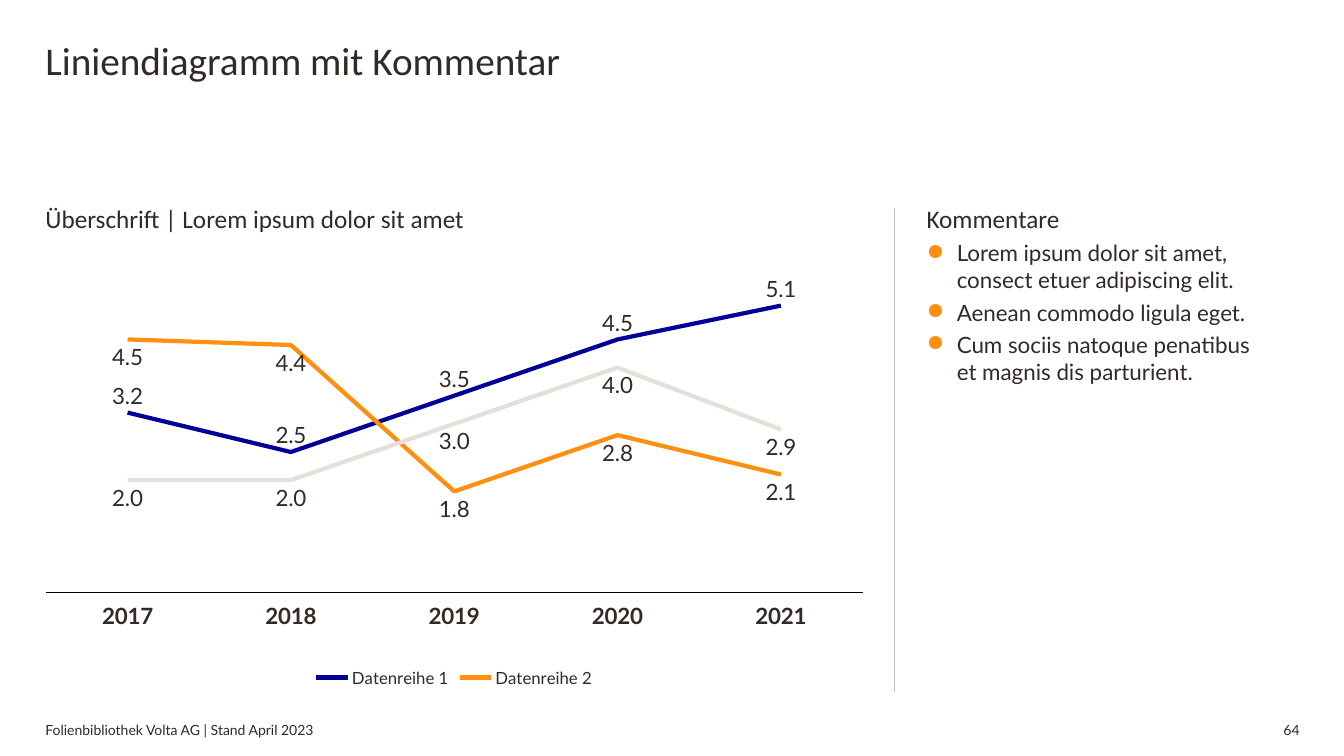
from copy import deepcopy

from lxml.etree import SubElement
from pptx import Presentation
from pptx.chart.data import CategoryChartData
from pptx.dml.color import RGBColor
from pptx.enum.chart import XL_CHART_TYPE, XL_LABEL_POSITION, XL_LEGEND_POSITION, XL_TICK_LABEL_POSITION, XL_TICK_MARK
from pptx.enum.shapes import MSO_CONNECTOR
from pptx.enum.text import MSO_ANCHOR, MSO_AUTO_SIZE, PP_ALIGN
from pptx.oxml import parse_xml
from pptx.oxml.ns import nsdecls, qn
from pptx.util import Inches, Pt

HUES = {
    "ink": "322A26", "rule": "BFBFBF", "axis": "000000", "dot": "FE8F11",
    "blue": "000099", "gold": "FF8F0F", "sand": "E5DFDA",
}
YEARS = ["2017", "2018", "2019", "2020", "2021"]
SERIES = [
    ("Datenreihe 1", [3.2, 2.5, 3.5, 4.5, 5.1], "blue", XL_LABEL_POSITION.ABOVE),
    ("Datenreihe 2", [4.5, 4.4, 1.8, 2.8, 2.1], "gold", XL_LABEL_POSITION.BELOW),
    ("Datenreihe 3", [2.0, 2.0, 3.0, 4.0, 2.9], "sand", XL_LABEL_POSITION.BELOW),
]
NOTES = [
    "Lorem ipsum dolor sit amet, consect etuer adipiscing elit.",
    "Aenean commodo ligula eget.",
    "Cum sociis natoque penatibus\vet magnis dis parturient.",
]
LEFT, SIDE, HEAD = 3.38, 68.94, 26.93
MAIN, FOOT, BASE = 60.84, 95.47, 91.47


def tint(name):
    return RGBColor.from_string(HUES[name])


def style(font, size, face="Lato", hue="ink", bold=False):
    font.size, font.name, font.bold = Pt(size), face, bold
    font.color.rgb = tint(hue)


def write(para, text, size, face="Lato", align=PP_ALIGN.LEFT, after=0, dot=False):
    para.text = text
    para.alignment = align
    para.space_before, para.space_after = Pt(0), Pt(after)
    if dot:
        props = para._p.get_or_add_pPr()
        props.set("marL", str(Inches(0.3)))
        props.set("indent", str(-Inches(0.3)))
        hue = SubElement(SubElement(props, qn("a:buClr")), qn("a:srgbClr"))
        hue.set("val", HUES["dot"])
        SubElement(props, qn("a:buChar")).set("char", "●")
    for run in para.runs:
        style(run.font, size, face)
    for gap in para._p.findall(qn("a:br")):
        gap.append(deepcopy(para.runs[0]._r.rPr))


class Deck:
    def __init__(self):
        self.file = Presentation()
        self.file.slide_width, self.file.slide_height = Inches(13.33), Inches(7.5)
        self.slide = self.file.slides.add_slide(self.file.slide_layouts[5])

    def across(self, share):
        return round(self.file.slide_width * share / 100)

    def down(self, share):
        return round(self.file.slide_height * share / 100)

    def place(self, left, top, width, height):
        return self.across(left), self.down(top), self.across(width), self.down(height)

    def frame(self, shape, anchor, wrap):
        frame = shape.text_frame
        frame.margin_left = frame.margin_right = frame.margin_top = frame.margin_bottom = 0
        frame.auto_size, frame.word_wrap = MSO_AUTO_SIZE.NONE, wrap
        frame.vertical_anchor = anchor
        return frame

    def title(self, text, *area):
        shape = self.slide.shapes.title
        shape.left, shape.top, shape.width, shape.height = self.place(*area)
        frame = self.frame(shape, MSO_ANCHOR.TOP, True)
        write(frame.paragraphs[0], text, 28, "Calibri")

    def text(self, text, *area, anchor=MSO_ANCHOR.TOP, wrap=True, **form):
        shape = self.slide.shapes.add_textbox(*self.place(*area))
        frame = self.frame(shape, anchor, wrap)
        write(frame.paragraphs[0], text, **form)
        return frame

    def rule(self, left, top, end):
        line = self.slide.shapes.add_connector(
            MSO_CONNECTOR.STRAIGHT, self.across(left), self.down(top), self.across(left), self.down(end))
        line.line.color.rgb, line.line.width = tint("rule"), Pt(0.75)
        SubElement(line._element.spPr, qn("a:effectLst"))

    def chart(self, *area):
        data = CategoryChartData(number_format="0.0")
        data.categories = YEARS
        for name, vals, _, _ in SERIES:
            data.add_series(name, vals)
        chart = self.slide.shapes.add_chart(XL_CHART_TYPE.LINE, *self.place(*area), data).chart
        style(chart.font, 10)
        chart.has_title = False
        self.axes(chart)
        self.legend(chart)
        plot = chart.plots[0]
        plot.vary_by_categories = False
        for series, (_, _, hue, spot) in zip(plot.series, SERIES):
            series.smooth = False
            series.format.line.color.rgb, series.format.line.width = tint(hue), Pt(3)
            labels = series.data_labels
            labels.show_value, labels.position = True, spot
            labels.number_format, labels.number_format_is_linked = "#,##0.0", False
            style(labels.font, 16)

    def axes(self, chart):
        years, vals = chart.category_axis, chart.value_axis
        years.major_tick_mark = years.minor_tick_mark = XL_TICK_MARK.NONE
        years.tick_label_position = XL_TICK_LABEL_POSITION.LOW
        years.format.line.color.rgb, years.format.line.width = tint("axis"), Pt(0.75)
        style(years.tick_labels.font, 16, bold=True)
        vals.minimum_scale, vals.maximum_scale = 0, 6
        vals.has_major_gridlines = vals.visible = False
        area = chart._chartSpace.chart.plotArea
        for old in area.findall(qn("c:layout")):
            area.remove(old)
        area.insert(0, parse_xml(
            f'<c:layout {nsdecls("c")}><c:manualLayout><c:layoutTarget val="inner"/>'
            '<c:xMode val="edge"/><c:yMode val="edge"/><c:x val="0"/><c:y val="0"/>'
            '<c:w val="1"/><c:h val="0.774"/></c:manualLayout></c:layout>'))

    def legend(self, chart):
        chart.has_legend = True
        legend = chart.legend
        legend.position, legend.include_in_layout = XL_LEGEND_POSITION.BOTTOM, False
        style(legend.font, 12)
        legend._element.find(qn("c:legendPos")).addnext(parse_xml(
            f'<c:legendEntry {nsdecls("c")}><c:idx val="2"/><c:delete val="1"/></c:legendEntry>'))


def main():
    deck = Deck()
    deck.title("Liniendiagramm mit Kommentar", LEFT, 4.8, 72.09, 7.33)
    deck.text("Folienbibliothek Volta AG | Stand April 2023", LEFT, FOOT, 82.97, 2.13,
              anchor=MSO_ANCHOR.BOTTOM, size=10)
    deck.text("64", 94.37, FOOT, 2.33, 2.13, anchor=MSO_ANCHOR.BOTTOM, wrap=False,
              size=10, align=PP_ALIGN.RIGHT)
    deck.text("Überschrift | Lorem ipsum dolor sit amet", LEFT, HEAD, MAIN, 4.67,
              size=18, face="Calibri", after=4)
    side = deck.text("Kommentare", SIDE, HEAD, 27.76, BASE - HEAD, size=18, face="Calibri", after=4)
    for note in NOTES:
        write(side.add_paragraph(), note, 16, after=4, dot=True)
    deck.rule(66.54, 27.47, BASE)
    deck.chart(LEFT, 33.73, MAIN, BASE - 33.73)
    deck.file.save("out.pptx")


if __name__ == "__main__":
    main()
